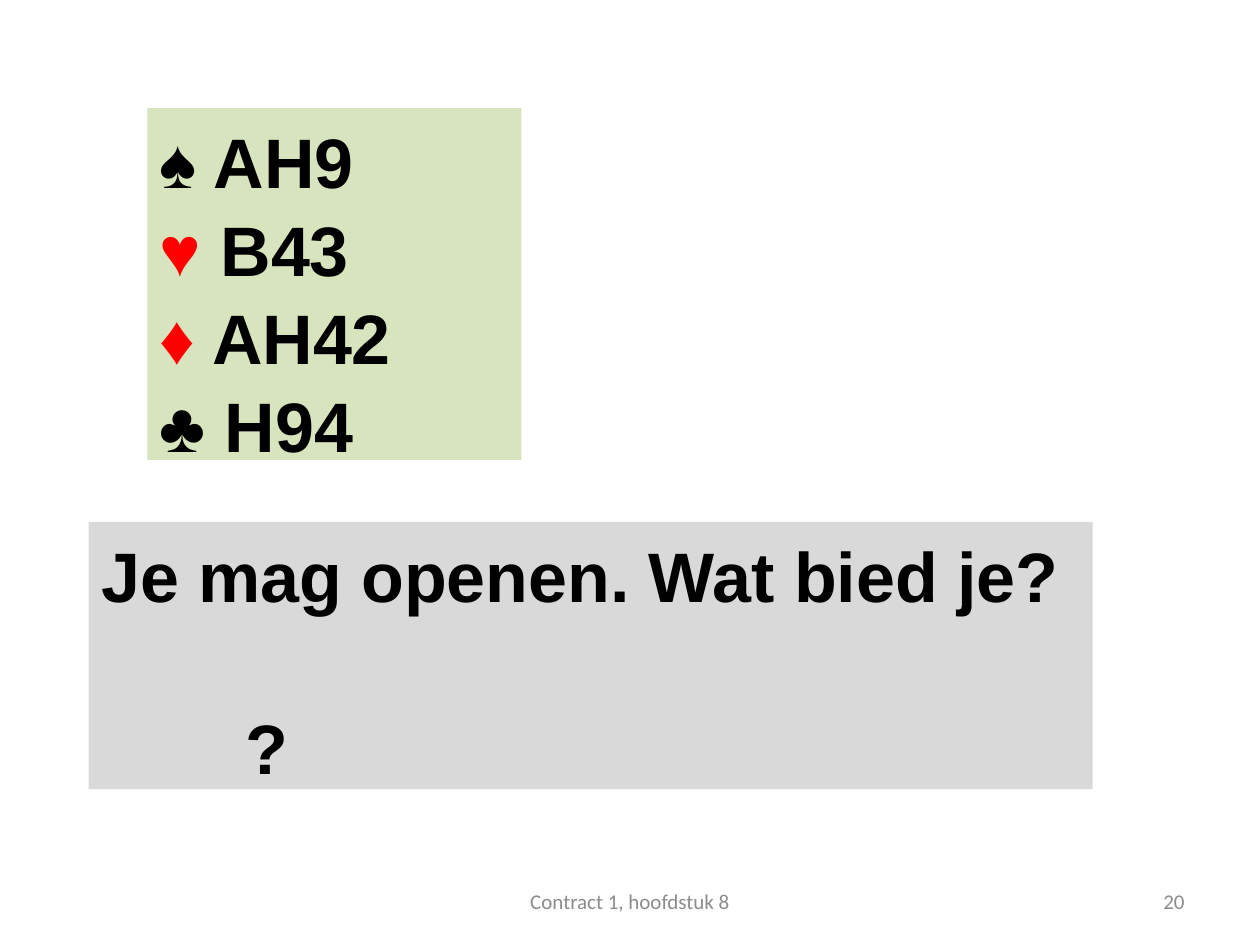
from pptx import Presentation
from pptx.dml.color import RGBColor
from pptx.enum.shapes import MSO_SHAPE as Shape
from pptx.enum.text import MSO_ANCHOR as Anchor, PP_ALIGN as Align
from pptx.util import Cm, Pt

BLACK = RGBColor(0x00, 0x00, 0x00)
RED = RGBColor(0xFF, 0x00, 0x00)
GREEN = RGBColor(0xD7, 0xE4, 0xBD)
LIGHT_GRAY = RGBColor(0xD9, 0xD9, 0xD9)
FOOTER_GRAY = RGBColor(0x8C, 0x8C, 0x8C)

presentation = Presentation()
presentation.slide_width, presentation.slide_height = Cm(25.4), Cm(19.05)
slide = presentation.slides.add_slide(presentation.slide_layouts[6])


def add_panel(left, top, width, height, color):
    shape = slide.shapes.add_shape(
        Shape.RECTANGLE, Cm(left), Cm(top), Cm(width), Cm(height))
    shape.shadow.inherit = False
    shape.fill.solid()
    shape.fill.fore_color.rgb = color
    shape.line.fill.background()
    shape.text_frame.word_wrap = True
    shape.text_frame.vertical_anchor = Anchor.TOP
    return shape.text_frame


def format_paragraph(paragraph, align, font_name, size, color, bold=False):
    paragraph.alignment = align
    paragraph.font.name = font_name
    paragraph.font.size = Pt(size)
    paragraph.font.bold = bold
    paragraph.font.color.rgb = color


hand = add_panel(2.97, 2.18, 7.54, 7.09, GREEN)
hand.text = "\n".join(["♠ AH9", "", "", "♣ H94"])
for index, suit, cards in [(1, "♥", " B43"), (2, "♦", " AH42")]:
    suit_run = hand.paragraphs[index].add_run()
    suit_run.text = suit
    suit_run.font.color.rgb = RED
    hand.paragraphs[index].add_run().text = cards

question = add_panel(1.79, 10.52, 20.24, 5.39, LIGHT_GRAY)
question.text = "Je mag openen. Wat bied je?\n?"
answer = question.paragraphs[1]
answer.space_before = Pt(48)
answer._p.get_or_add_pPr().set("marL", str(Cm(2.9)))

for paragraph in hand.paragraphs + question.paragraphs:
    format_paragraph(paragraph, Align.LEFT, "Arial", 40, BLACK, True)
    paragraph.line_spacing = 1.05

for text, left, width, align in [
    ("20", 18.2, 5.93, Align.RIGHT),
    ("Contract 1, hoofdstuk 8", 8.68, 8.04, Align.CENTER),
]:
    footer = slide.shapes.add_textbox(Cm(left), Cm(17.66), Cm(width), Cm(1.01))
    footer.text_frame.word_wrap = True
    footer.text_frame.vertical_anchor = Anchor.MIDDLE
    footer.text_frame.text = text
    format_paragraph(footer.text_frame.paragraphs[0], align, "Calibri", 12, FOOTER_GRAY)

presentation.save("out.pptx")
